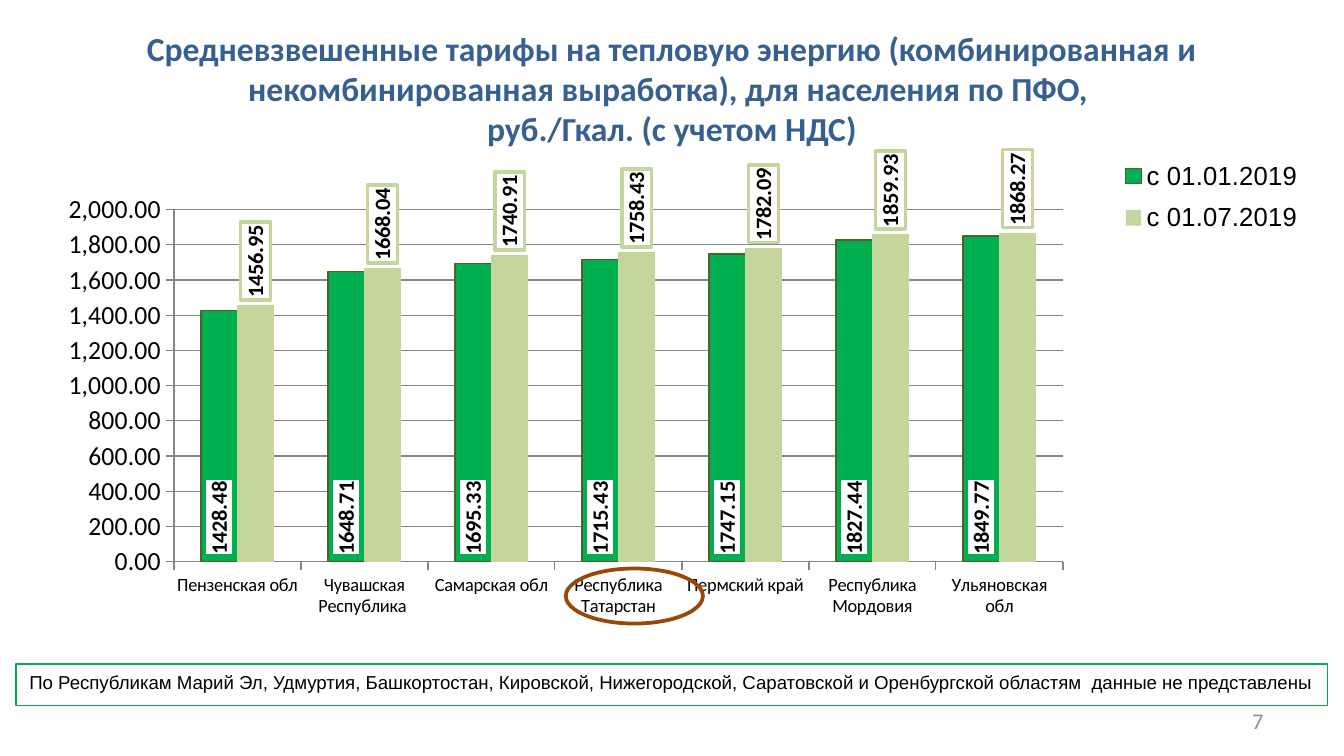
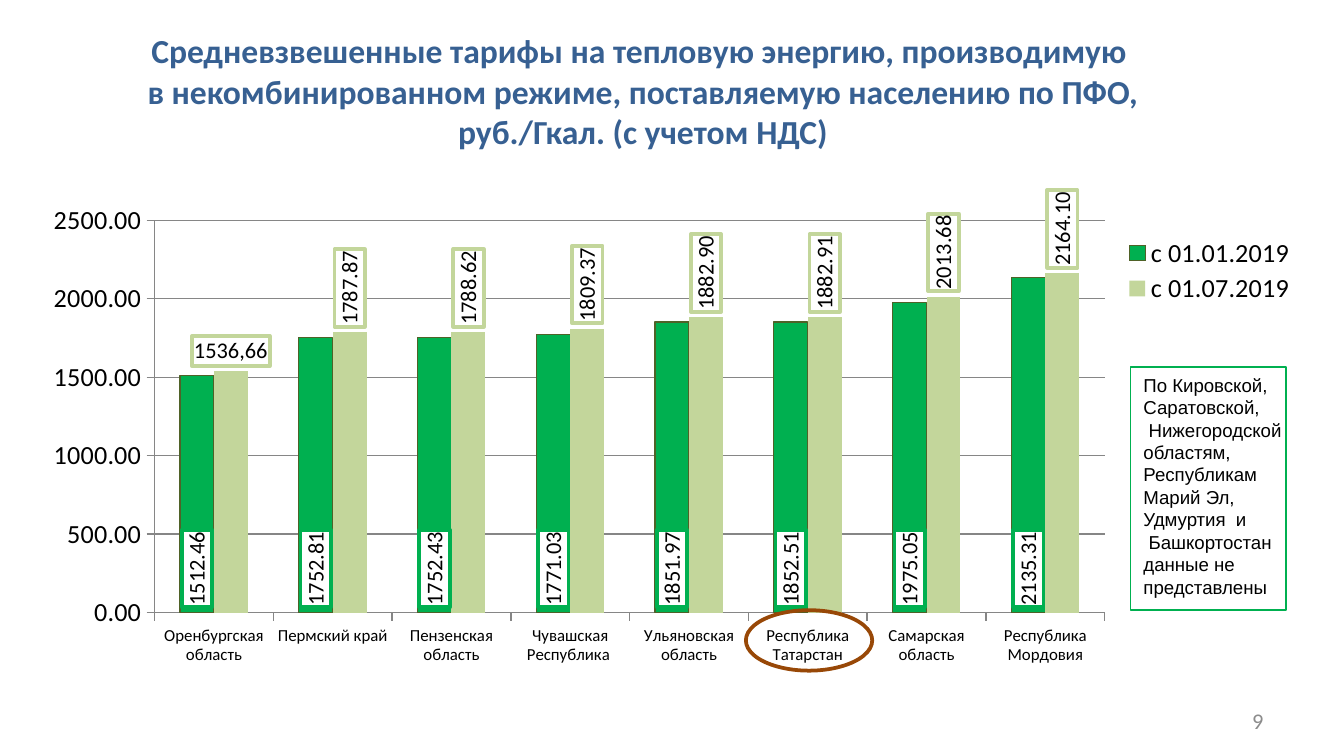
from pptx import Presentation
from pptx.chart.data import CategoryChartData
from pptx.dml.color import RGBColor
from pptx.enum.chart import XL_CHART_TYPE, XL_LABEL_POSITION, XL_LEGEND_POSITION, XL_TICK_MARK
from pptx.enum.shapes import MSO_SHAPE
from pptx.enum.text import MSO_ANCHOR, MSO_AUTO_SIZE, PP_ALIGN
from pptx.oxml import parse_xml
from pptx.oxml.ns import nsdecls, qn
from pptx.util import Inches, Pt

COLUMN = XL_CHART_TYPE.COLUMN_CLUSTERED
BASE = XL_LABEL_POSITION.INSIDE_BASE
OUT = XL_LABEL_POSITION.OUTSIDE_END
RIGHT = XL_LEGEND_POSITION.RIGHT
TICK, NO_TICK = XL_TICK_MARK.OUTSIDE, XL_TICK_MARK.NONE
OVAL, RECT = MSO_SHAPE.OVAL, MSO_SHAPE.RECTANGLE
TOP, MID = MSO_ANCHOR.TOP, MSO_ANCHOR.MIDDLE
LEFT, CENTER, END = PP_ALIGN.LEFT, PP_ALIGN.CENTER, PP_ALIGN.RIGHT
NO_FIT = MSO_AUTO_SIZE.NONE

BLUE, GREEN, LIME, OLIVE = "376092", "00B050", "C3D69B", "4F6228"
BROWN, GRAY, GRID, BLACK = "984807", "8C8C8C", "868686", "000000"
NAMES = ("c 01.01.2019", "c 01.07.2019")
TITLE_ONLY = 5


def color(code):
    return RGBColor.from_string(code)


def style(font, size, face="Calibri", tint=BLACK, bold=False):
    font.size, font.name, font.bold = Pt(size), face, bold
    font.color.rgb = color(tint)


def write(frame, text, align=LEFT, anchor=TOP, wrap=True, **look):
    frame.auto_size = NO_FIT
    frame.word_wrap = wrap
    frame.vertical_anchor = anchor
    frame.text = text
    for par in frame.paragraphs:
        par.alignment = align
        for run in par.runs:
            style(run.font, **look)


def place(box):
    return [Inches(n) for n in box]


def title(slide, box, text):
    head = slide.shapes.title
    head.left, head.top, head.width, head.height = place(box)
    write(head.text_frame, text, align=CENTER, anchor=MID,
          size=18, tint=BLUE, bold=True)


def outline(slide, kind, box, tint, width):
    shape = slide.shapes.add_shape(kind, *place(box))
    shape.shadow.inherit = False
    shape.fill.background()
    shape.line.color.rgb = color(tint)
    shape.line.width = Pt(width)
    return shape


def note(slide, box, text):
    shape = outline(slide, RECT, box, GREEN, 0.75)
    write(shape.text_frame, text, wrap=False, size=10, face="Arial")


def number(slide, text):
    box = slide.shapes.add_textbox(*place((7.17, 5.21, 2.33, 0.3)))
    write(box.text_frame, text, align=END, anchor=MID, size=12, tint=GRAY)


def layout(parent, index, box, part, inner=False):
    for old in parent.findall(qn("c:layout")):
        parent.remove(old)
    wide, high = box[2:]
    bits = '<c:layoutTarget val="inner"/>' if inner else ""
    bits += "".join(f'<c:{k}Mode val="edge"/>' for k in "xy")
    for key, size, full in zip("xywh", part, (wide, high, wide, high)):
        bits += f'<c:{key} val="{size / full}"/>'
    parent.insert(index, parse_xml(
        f'<c:layout {nsdecls("c")}><c:manualLayout>{bits}'
        "</c:manualLayout></c:layout>"))


def frame_xml(tint):
    return parse_xml(
        f'<c:spPr {nsdecls("c", "a")}>'
        '<a:solidFill><a:srgbClr val="FFFFFF"/></a:solidFill>'
        f'<a:ln w="{Pt(2)}"><a:solidFill><a:srgbClr val="{tint}"/>'
        "</a:solidFill></a:ln></c:spPr>")


def label(series, tint, spot, bold):
    tags = series.data_labels
    tags.show_value = True
    tags.number_format = "0.00"
    tags.number_format_is_linked = False
    tags.position = spot
    style(tags.font, 12, bold=bold)
    props = tags._element.find(qn("c:txPr"))
    props.addprevious(frame_xml(tint))
    body = props.find(qn("a:bodyPr"))
    body.set("rot", "-5400000")
    body.set("vert", "horz")


def relabel(point, text):
    tag = point.data_label
    frame = tag.text_frame
    frame.text = text
    style(frame.paragraphs[0].runs[0].font, 12)
    tag.position = OUT
    rich = frame._element.getparent()
    rich.addnext(frame_xml(LIME))


def axes(chart, small, top, step, form):
    for axis, size in ((chart.category_axis, small), (chart.value_axis, 14)):
        style(axis.tick_labels.font, size)
        axis.major_tick_mark, axis.minor_tick_mark = TICK, NO_TICK
        axis.format.line.color.rgb = color(GRID)
    scale = chart.value_axis
    scale.minimum_scale, scale.maximum_scale, scale.major_unit = 0, top, step
    scale.tick_labels.number_format = form
    scale.tick_labels.number_format_is_linked = False
    scale.has_major_gridlines = True
    scale.major_gridlines.format.line.color.rgb = color(GRID)


def columns(slide, box, rows, plot, key, small, top, step, form,
            face="Calibri", bold=False):
    data = CategoryChartData()
    cats, *sets = zip(*rows)
    data.categories = cats
    for name, vals in zip(NAMES, sets):
        data.add_series(name, vals)
    chart = slide.shapes.add_chart(COLUMN, *place(box), data).chart
    chart.has_title = False
    style(chart.font, 18)
    axes(chart, small, top, step, form)
    bars = chart.plots[0]
    bars.gap_width, bars.overlap, bars.vary_by_categories = 150, 0, False
    for series, tint, spot in zip(bars.series, (GREEN, LIME), (BASE, OUT)):
        series.format.fill.solid()
        series.format.fill.fore_color.rgb = color(tint)
        label(series, tint, spot, bold)
    edge = bars.series[0].format.line
    edge.color.rgb, edge.width = color(OLIVE), Pt(0.75)
    chart.has_legend = True
    legend = chart.legend
    legend.position, legend.include_in_layout = RIGHT, False
    style(legend.font, 14, face)
    layout(legend._element, 1, box, key)
    layout(chart._chartSpace.chart.plotArea, 0, box, plot, inner=True)
    return chart


def all_heat(slide):
    title(slide, (0, 0.33, 10, 0.65),
          "Средневзвешенные тарифы на тепловую энергию (комбинированная и "
          "некомбинированная выработка), для населения по ПФО, \v"
          "руб./Гкал. (с учетом НДС)")
    rows = (
        ("Пензенская обл", 1428.48, 1456.95),
        ("Чувашская Республика ", 1648.71, 1668.04),
        ("Самарская обл", 1695.33, 1740.91),
        ("Республика Татарстан", 1715.43, 1758.43),
        ("Пермский край", 1747.15, 1782.09),
        ("Республика Мордовия", 1827.44, 1859.93),
        ("Ульяновская обл", 1849.77, 1868.27),
    )
    columns(slide, (0.51, 0.14, 9.29, 4.49), rows,
            (0.61, 1.42, 6.75, 2.62), (7.74, 0.97, 1.5, 0.71),
            10, 2000, 200, "#,##0.00", face="Arial", bold=True)
    outline(slide, OVAL, (4.21, 4.23, 1.02, 0.41), BROWN, 2)
    number(slide, "7")
    note(slide, (0.12, 4.94, 9.76, 0.31),
         "По Республикам Марий Эл, Удмуртия, Башкортостан, Кировской, "
         "Нижегородской, Саратовской и Оренбургской областям  "
         "данные не представлены")


def plain_heat(slide):
    title(slide, (0, 0.37, 9.57, 0.61),
          "Средневзвешенные тарифы на тепловую энергию, производимую \v"
          "в некомбинированном режиме, поставляемую населению по ПФО,\v"
          "руб./Гкал. (с учетом НДС)")
    rows = (
        ("Оренбургская область", 1512.46, 1536.66),
        ("Пермский край", 1752.81, 1787.87),
        ("Пензенская область", 1752.43, 1788.62),
        ("Чувашская Республика ", 1771.03, 1809.37),
        ("Ульяновская область", 1851.97, 1882.9),
        ("Республика Татарстан", 1852.51, 1882.91),
        ("Самарская область", 1975.05, 2013.68),
        ("Республика Мордовия", 2135.31, 2164.1),
    )
    chart = columns(slide, (0.2, 0.78, 9.61, 4.54), rows,
                    (0.95, 0.86, 7.07, 2.92), (8.08, 0.96, 1.44, 0.55),
                    9, 2500, 500, "0.00")
    relabel(chart.plots[0].series[1].points[0], "1536,66")
    outline(slide, OVAL, (5.55, 4.54, 0.94, 0.45), BROWN, 2)
    number(slide, "9")
    note(slide, (8.41, 2.73, 1.16, 1.81),
         "По Кировской,\nСаратовской,\n Нижегородской\nобластям,\n"
         "Республикам\nМарий Эл,\nУдмуртия  и\n Башкортостан\n"
         "данные не\nпредставлены")


def main():
    deck = Presentation()
    deck.slide_width = Inches(10)
    deck.slide_height = Inches(10 * 9 / 16)
    for build in (all_heat, plain_heat):
        build(deck.slides.add_slide(deck.slide_layouts[TITLE_ONLY]))
    deck.save("out.pptx")


if __name__ == "__main__":
    main()
